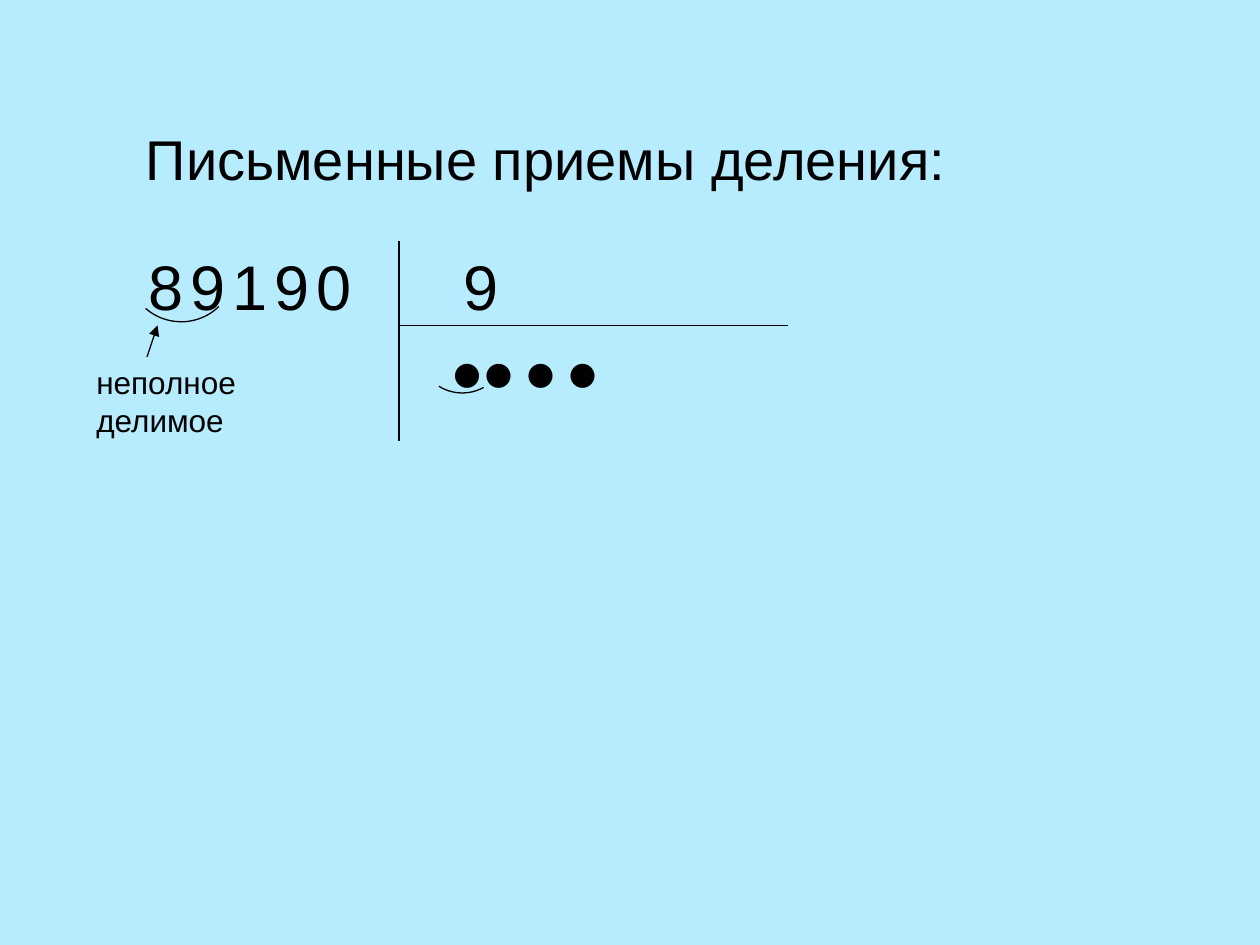
from math import cos, radians, sin

from lxml.etree import SubElement
from pptx import Presentation
from pptx.dml.color import RGBColor
from pptx.enum.shapes import MSO_CONNECTOR, MSO_SHAPE
from pptx.enum.text import MSO_AUTO_SIZE, PP_ALIGN
from pptx.oxml.ns import qn
from pptx.util import Inches, Pt

TITLE = "Письменные приемы деления:"
NOTE = "неполное делимое"
BLACK, BACKGROUND, DOT_CORE = "000000", "B7ECFF", "BBE0E3"

# Everything but the arcs sits on a grid of twelve cells to the inch.
CELL = Inches(1) / 12
DIGIT_ROW, DOT_ROW = 23, 33
DIGIT_HEIGHT, DOT_HEIGHT = 8.52, 4.92

DIVISOR = ("9", 43, 10)  # text, column, width
DIVIDEND = [("0", 29, 4), ("1", 21, 5), ("8", 13, 6), ("9", 17, 5), ("9", 25, 4)]
DOT_COLUMNS = [42, 45, 49, 53]
# from column, from row, to column, to row, arrowhead
LINES = [(38, 23, 38, 42, False), (75, 31, 38, 31, False)]
POINTER = (14, 34, 15, 31, True)
# inches and degrees: arc centre, pivot of the turn, radius, start, end, turn
DIVIDEND_ARC = ((1.44, 2.12), (1.42, 2.39), 0.43, 46, 131, 58.4)
QUOTIENT_ARC = ((3.67, 2.77), (3.66, 3.01), 0.35, 61, 122, 47)


def rgb(color):
    return RGBColor.from_string(color)


def cells(*counts):
    return [round(n * CELL) for n in counts]


def write(sp, text, size, font="Arial", align=PP_ALIGN.LEFT, before=0.08, spacing=1.0):
    """Fill a shape with one paragraph; before is a share of the text size."""
    tf = sp.text_frame
    tf.word_wrap = True
    tf.auto_size = MSO_AUTO_SIZE.NONE
    p = tf.paragraphs[0]
    p.alignment = align
    p.line_spacing = spacing
    p.space_before = Pt(round(size * before, 1))
    r = p.add_run()
    r.text = text
    r.font.size = Pt(size)
    r.font.name = font
    r.font.color.rgb = rgb(BLACK)
    return p


def add_text(s, text, box, size, **fmt):
    write(s.shapes.add_textbox(*cells(*box)), text, size, **fmt)


def add_digit(s, digit, column, width):
    add_text(s, digit, (column, DIGIT_ROW, width, DIGIT_HEIGHT), 36)


def outline(sp):
    sp.line.color.rgb = rgb(BLACK)
    sp.line.width = Pt(0.75)


def add_line(s, *ends, arrow=False):
    line = s.shapes.add_connector(MSO_CONNECTOR.STRAIGHT, *cells(*ends))
    outline(line)
    if arrow:
        SubElement(line.line._get_or_add_ln(), qn("a:tailEnd"), type="triangle")
    SubElement(line._element.spPr, qn("a:effectLst"))


def add_arc(s, centre, pivot, radius, start, end, turn, steps=24):
    """Draw an open arc, laid out before its turn, in a box that holds its centre."""
    def unturned(x, y):
        dx, dy, a = x - pivot[0], y - pivot[1], radians(-turn)
        return (Inches(pivot[0] + dx * cos(a) - dy * sin(a)),
                Inches(pivot[1] + dx * sin(a) + dy * cos(a)))

    angles = [radians(start + (end - start) * i / steps) for i in range(steps + 1)]
    points = [unturned(centre[0] + radius * cos(a), centre[1] + radius * sin(a))
              for a in angles]
    builder = s.shapes.build_freeform(*unturned(*centre))
    builder.move_to(*points[0])
    builder.add_line_segments(points[1:], close=False)
    arc = builder.convert_to_shape()
    arc.rotation = turn
    arc.shadow.inherit = False
    arc.fill.background()
    outline(arc)


def add_dot(s, column, core):
    if core:
        sp = s.shapes.add_shape(MSO_SHAPE.OVAL, *cells(column + 2, DOT_ROW + 2, 1, 1))
        sp.shadow.inherit = False
        sp.fill.solid()
        sp.fill.fore_color.rgb = rgb(DOT_CORE)
        outline(sp)
    add_text(s, "●", (column, DOT_ROW, 4, DOT_HEIGHT), 18, font="Montserrat")


def add_title(s):
    s.shapes.title.element.getparent().remove(s.shapes.title.element)
    body = s.placeholders[1]
    body.left, body.top, body.width, body.height = cells(5, 12, 94, 7)
    p = write(body, TITLE, 32, align=PP_ALIGN.CENTER, before=0.11, spacing=0.9)
    pPr = p._p.get_or_add_pPr()
    pPr.set("marL", "0")
    pPr.set("indent", "0")
    SubElement(pPr, qn("a:buNone"))


def main():
    prs = Presentation()
    prs.slide_width, prs.slide_height = Inches(10), Inches(7.5)
    s = prs.slides.add_slide(prs.slide_layouts[1])
    s.background.fill.solid()
    s.background.fill.fore_color.rgb = rgb(BACKGROUND)

    add_title(s)
    for *ends, arrow in LINES:
        add_line(s, *ends, arrow=arrow)
    add_digit(s, *DIVISOR)
    add_arc(s, *DIVIDEND_ARC)
    add_text(s, NOTE, (8, 34, 17, DIGIT_HEIGHT), 18)
    *ends, arrow = POINTER
    add_line(s, *ends, arrow=arrow)
    add_dot(s, DOT_COLUMNS[0], core=False)
    add_arc(s, *QUOTIENT_ARC)
    for digit in DIVIDEND:
        add_digit(s, *digit)
    for column in DOT_COLUMNS[1:]:
        add_dot(s, column, core=True)

    prs.save("out.pptx")


if __name__ == "__main__":
    main()
